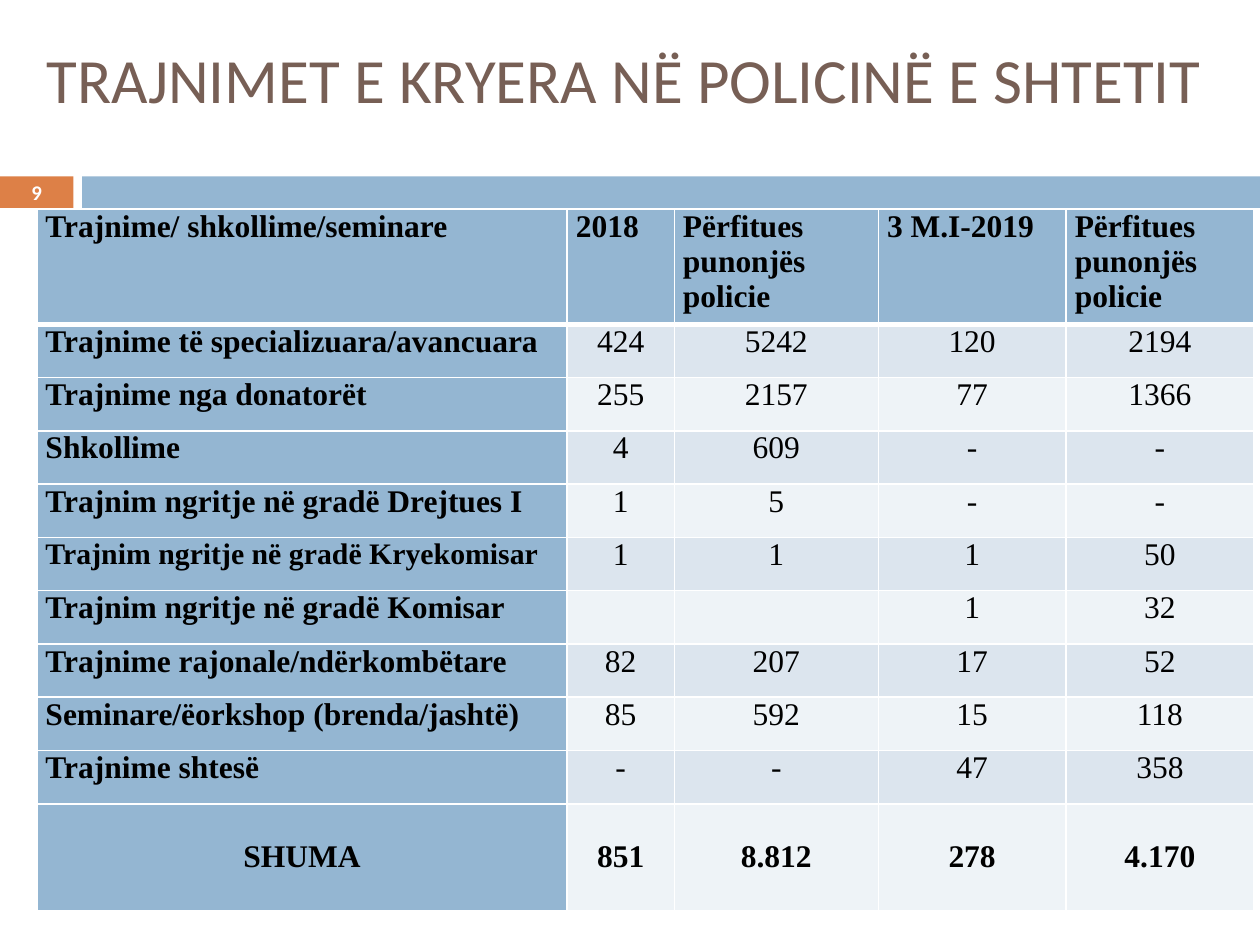
import pptx
import pptx.util
import pptx.dml.color
import pptx.enum.shapes
import pptx.enum.text
import pptx.oxml
import pptx.oxml.ns

Pt = pptx.util.Pt
RGBColor = pptx.dml.color.RGBColor
ALIGN = pptx.enum.text.PP_ALIGN
ANCHOR = pptx.enum.text.MSO_ANCHOR

ORANGE = RGBColor(0xDD, 0x80, 0x47)
BLUE = RGBColor(0x94, 0xB6, 0xD2)
BROWN = RGBColor(0x77, 0x5F, 0x55)
WHITE = RGBColor(0xFF, 0xFF, 0xFF)
BLACK = RGBColor(0, 0, 0)
BANDS = (RGBColor(0xEE, 0xF3, 0xF7), RGBColor(0xDC, 0xE5, 0xEE))

COLUMN_WIDTHS = (303.1, 61.2, 116.6, 107.3, 107.3)
HEADER_HEIGHT, ROW_HEIGHT, TOTAL_HEIGHT = 65.8, 30.45, 61
BENEFICIARIES = "Përfitues\npunonjës policie"
TRAININGS = (
    ("Trajnime/ shkollime/seminare", "2018", BENEFICIARIES, "3 M.I-2019", BENEFICIARIES),
    ("Trajnime të specializuara/avancuara", "424", "5242", "120", "2194"),
    ("Trajnime nga donatorët", "255", "2157", "77", "1366"),
    ("Shkollime", "4", "609", "-", "-"),
    ("Trajnim ngritje në gradë Drejtues I", "1", "5", "-", "-"),
    ("Trajnim ngritje në gradë Kryekomisar", "1", "1", "1", "50"),
    ("Trajnim ngritje në gradë Komisar", "", "", "1", "32"),
    ("Trajnime rajonale/ndërkombëtare", "82", "207", "17", "52"),
    ("Seminare/ëorkshop (brenda/jashtë)", "85", "592", "15", "118"),
    ("Trajnime shtesë", "-", "-", "47", "358"),
    ("SHUMA", "851", "8.812", "278", "4.170"),
)


def write_text(frame, text, font="Calibri", size=18, color=BLACK, bold=False, align=ALIGN.CENTER):
    frame.word_wrap = True
    frame.text = text
    for paragraph in frame.paragraphs:
        paragraph.alignment = align
        paragraph.font.name = font
        paragraph.font.size = Pt(size)
        paragraph.font.bold = bold
        paragraph.font.color.rgb = color


def add_title(slide, left, top, width, height):
    title = slide.shapes.add_textbox(Pt(left), Pt(top), Pt(width), Pt(height))
    frame = title.text_frame
    frame.margin_left = frame.margin_right = 0
    frame.vertical_anchor = ANCHOR.MIDDLE
    write_text(frame, "TRAJNIMET E KRYERA NË POLICINË E SHTETIT", size=36, color=BROWN)


def add_band(slide, left, top, width, height):
    number_width, gap = 42, 5
    bar_offset = number_width + gap
    parts = ((0, number_width, ORANGE), (bar_offset, width - bar_offset, BLUE))
    for offset, part_width, color in parts:
        bar = slide.shapes.add_shape(
            pptx.enum.shapes.MSO_SHAPE.RECTANGLE,
            Pt(left + offset), Pt(top), Pt(part_width), Pt(height))
        bar.shadow.inherit = False
        bar.fill.solid()
        bar.fill.fore_color.rgb = color
        bar.line.fill.background()
    number = slide.shapes.add_textbox(Pt(left), Pt(top), Pt(number_width), Pt(height))
    number.text_frame.margin_top = number.text_frame.margin_bottom = 0
    number.text_frame.vertical_anchor = ANCHOR.MIDDLE
    write_text(number.text_frame, "9", size=11.9, color=WHITE, bold=True)


def set_borders(cell, **widths):
    properties = cell._tc.get_or_add_tcPr()
    for side in "LRTB":
        properties.append(pptx.oxml.parse_xml(
            f'<a:ln{side} {pptx.oxml.ns.nsdecls("a")} w="{Pt(widths.get(side, 1))}">'
            f'<a:solidFill><a:srgbClr val="{WHITE}"/></a:solidFill></a:ln{side}>'))


def add_trainings(slide, left, top):
    last = len(TRAININGS) - 1
    heights = [HEADER_HEIGHT] + [ROW_HEIGHT] * (last - 1) + [TOTAL_HEIGHT]
    table = slide.shapes.add_table(
        len(TRAININGS), len(COLUMN_WIDTHS), Pt(left), Pt(top),
        Pt(sum(COLUMN_WIDTHS)), Pt(sum(heights))).table
    for column, width in zip(table.columns, COLUMN_WIDTHS):
        column.width = Pt(width)
    for row, height in zip(table.rows, heights):
        row.height = Pt(height)
    for row_index, training in enumerate(TRAININGS):
        header, total = row_index == 0, row_index == last
        for column_index, text in enumerate(training):
            cell = table.cell(row_index, column_index)
            label = column_index == 0
            set_borders(cell, B=3 if header else 1, T=3 if row_index == 1 else 1)
            cell.fill.solid()
            cell.fill.fore_color.rgb = BLUE if header or label else BANDS[row_index % 2]
            cell.margin_left = cell.margin_right = Pt(5)
            cell.margin_top = cell.margin_bottom = 0
            cell.vertical_anchor = ANCHOR.MIDDLE if total else ANCHOR.TOP
            write_text(
                cell.text_frame, text, font="Times New Roman",
                size=17 if text.endswith("Kryekomisar") else 18,
                bold=header or label or total,
                align=ALIGN.LEFT if header or (label and not total) else ALIGN.CENTER)


def main():
    presentation = pptx.Presentation()
    presentation.slide_width, presentation.slide_height = Pt(720), Pt(540)
    slide = presentation.slides.add_slide(presentation.slide_layouts[6])
    add_band(slide, 0, 100.8, 720, 18)
    add_title(slide, 19, 6, 675, 78)
    add_trainings(slide, 21, 119.5)
    presentation.save("out.pptx")


if __name__ == "__main__":
    main()
